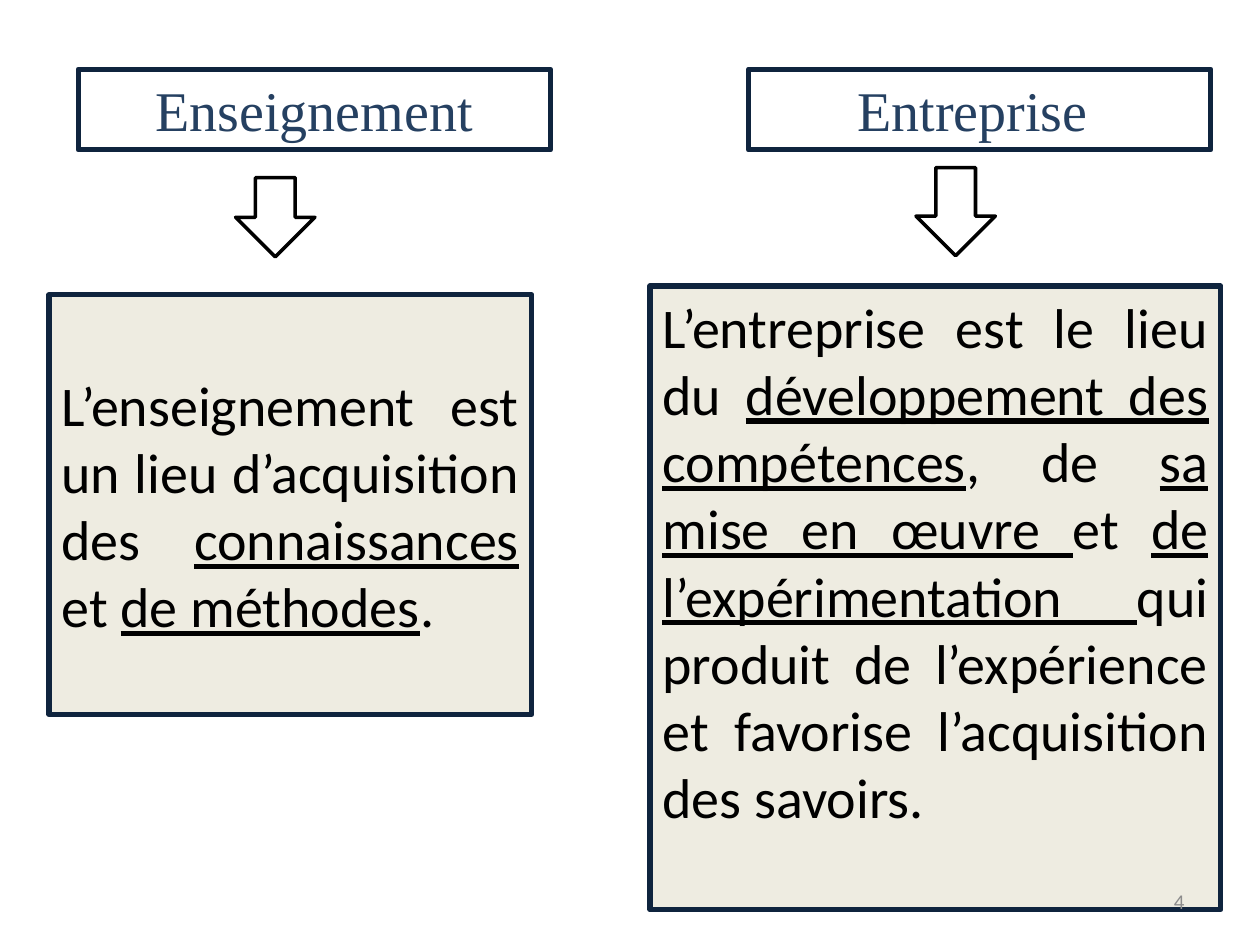
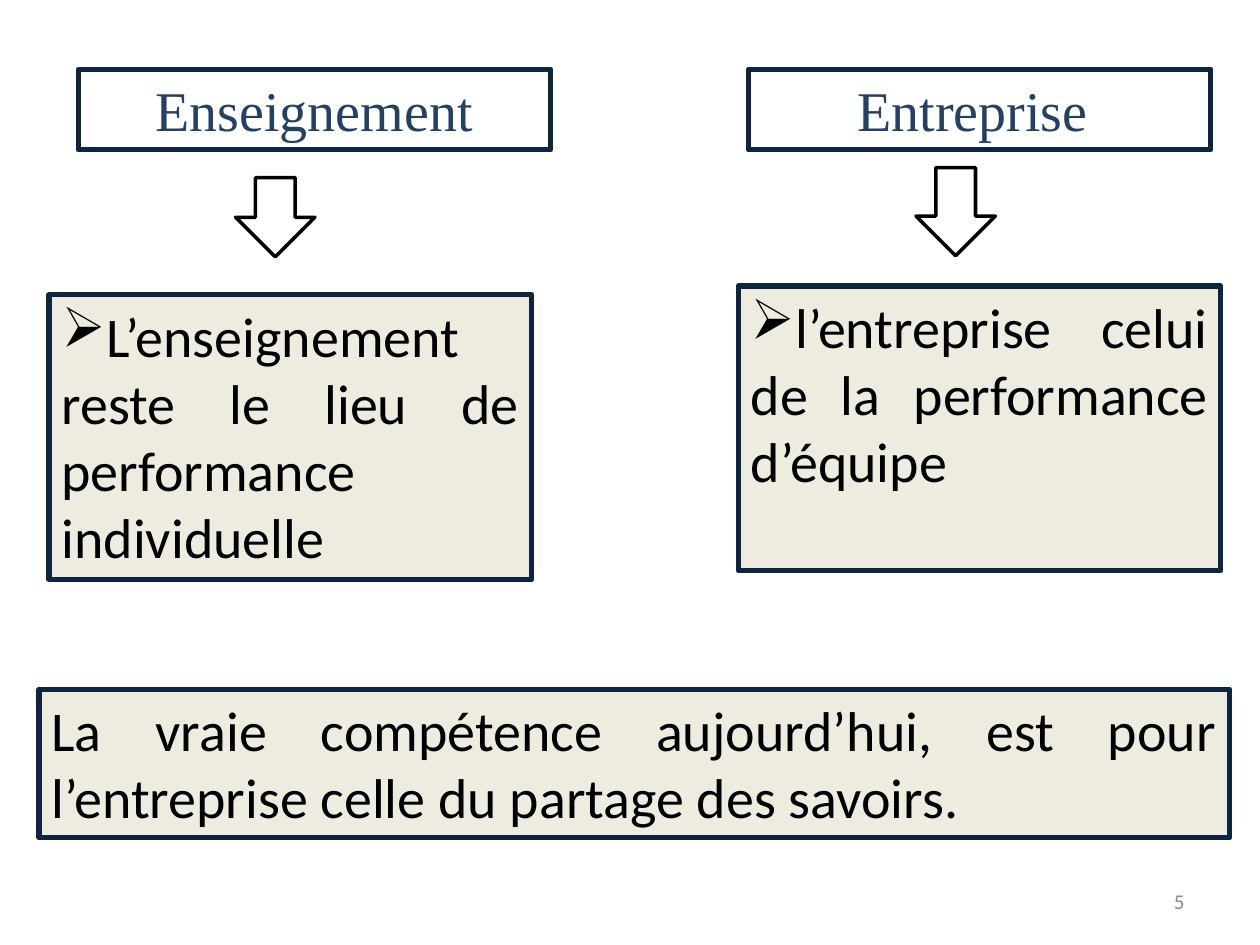
from lxml import etree
from pptx import Presentation
from pptx import util as u
from pptx.dml.color import RGBColor
from pptx.enum import shapes, text
from pptx.oxml.ns import qn

COLORS = {
    "border": "0F243E",
    "heading": "254061",
    "panel": "EEECE1",
    "ink": "000000",
    "number": "8C8C8C",
}
ALIGN = text.PP_ALIGN
ANCHOR = text.MSO_ANCHOR
SHAPE = shapes.MSO_SHAPE


def color(name):
    return RGBColor.from_string(COLORS[name])


def write(box, content, font="Calibri", size=32, ink="ink", align=ALIGN.JUSTIFY,
          anchor=ANCHOR.TOP, bullet=None):
    frame = box.text_frame
    frame.word_wrap = True
    frame.auto_size = text.MSO_AUTO_SIZE.NONE
    frame.vertical_anchor = anchor
    para = frame.paragraphs[0]
    para.alignment = align
    if bullet:
        properties = para._p.get_or_add_pPr()
        properties.set("marL", "0")
        properties.set("indent", "0")
        etree.SubElement(properties, qn("a:buChar")).set("char", bullet)
    for index, part in enumerate(content.split("_")):
        span = para.add_run()
        span.text = part
        span.font.name = font
        span.font.size = u.Pt(size)
        span.font.color.rgb = color(ink)
        if index % 2:
            span.font.underline = True


class Slides:
    def __init__(self):
        self.deck = Presentation()
        self.deck.slide_width = u.Inches(10)
        self.deck.slide_height = u.Inches(7.5)
        self.page = None

    def shape(self, kind, place, border="border", width=3, fill=None):
        box = self.page.shapes.add_shape(kind, *map(u.Inches, place))
        box.shadow.inherit = False
        box.line.color.rgb = color(border)
        box.line.width = u.Pt(width)
        if fill:
            box.fill.solid()
            box.fill.fore_color.rgb = color(fill)
        else:
            box.fill.background()
        return box

    def heading(self, title, left, width):
        box = self.shape(SHAPE.RECTANGLE, (left, 0.55, width, 0.64))
        write(box, title, font="Times New Roman", ink="heading", align=ALIGN.CENTER)

    def arrow(self, left, top, height):
        self.shape(SHAPE.DOWN_ARROW, (left, top, 0.63, height), border="ink", width=2)

    def panel(self, content, place, **style):
        write(self.shape(SHAPE.RECTANGLE, place, fill="panel"), content, **style)

    def number(self, value):
        box = self.page.shapes.add_textbox(*map(u.Inches, (7.17, 6.95, 2.33, 0.4)))
        write(box, str(value), size=12, ink="number", align=ALIGN.RIGHT,
              anchor=ANCHOR.MIDDLE)

    def comparison(self):
        self.page = self.deck.slides.add_slide(self.deck.slide_layouts[6])
        self.heading("Enseignement", 0.62, 3.75)
        self.heading("Entreprise ", 5.94, 3.67)
        self.arrow(1.87, 1.41, 0.63)
        self.arrow(7.27, 1.33, 0.7)


def main():
    slides = Slides()

    slides.comparison()
    slides.panel(
        "L’enseignement est un lieu d’acquisition des _connaissances_ et _de méthodes_. ",
        (0.39, 2.34, 3.83, 3.33), anchor=ANCHOR.MIDDLE)
    slides.panel(
        "L’entreprise est le lieu du _développement des compétences_, de _sa_ "
        "_mise en œuvre _et _de l’expérimentation _qui produit de l’expérience "
        "et favorise l’acquisition des savoirs.",
        (5.16, 2.27, 4.53, 4.95))
    slides.number(4)

    slides.comparison()
    slides.panel("L’enseignement reste le lieu de performance individuelle",
                 (0.39, 2.34, 3.83, 2.26), bullet="➢")
    slides.panel("l’entreprise celui de la performance d’équipe",
                 (5.86, 2.27, 3.83, 2.26), bullet="➢")
    slides.panel(
        "La vraie compétence aujourd’hui, est pour l’entreprise celle du partage "
        "des savoirs.",
        (0.31, 5.47, 9.45, 1.18))
    slides.number(5)

    slides.deck.save("out.pptx")


if __name__ == "__main__":
    main()
